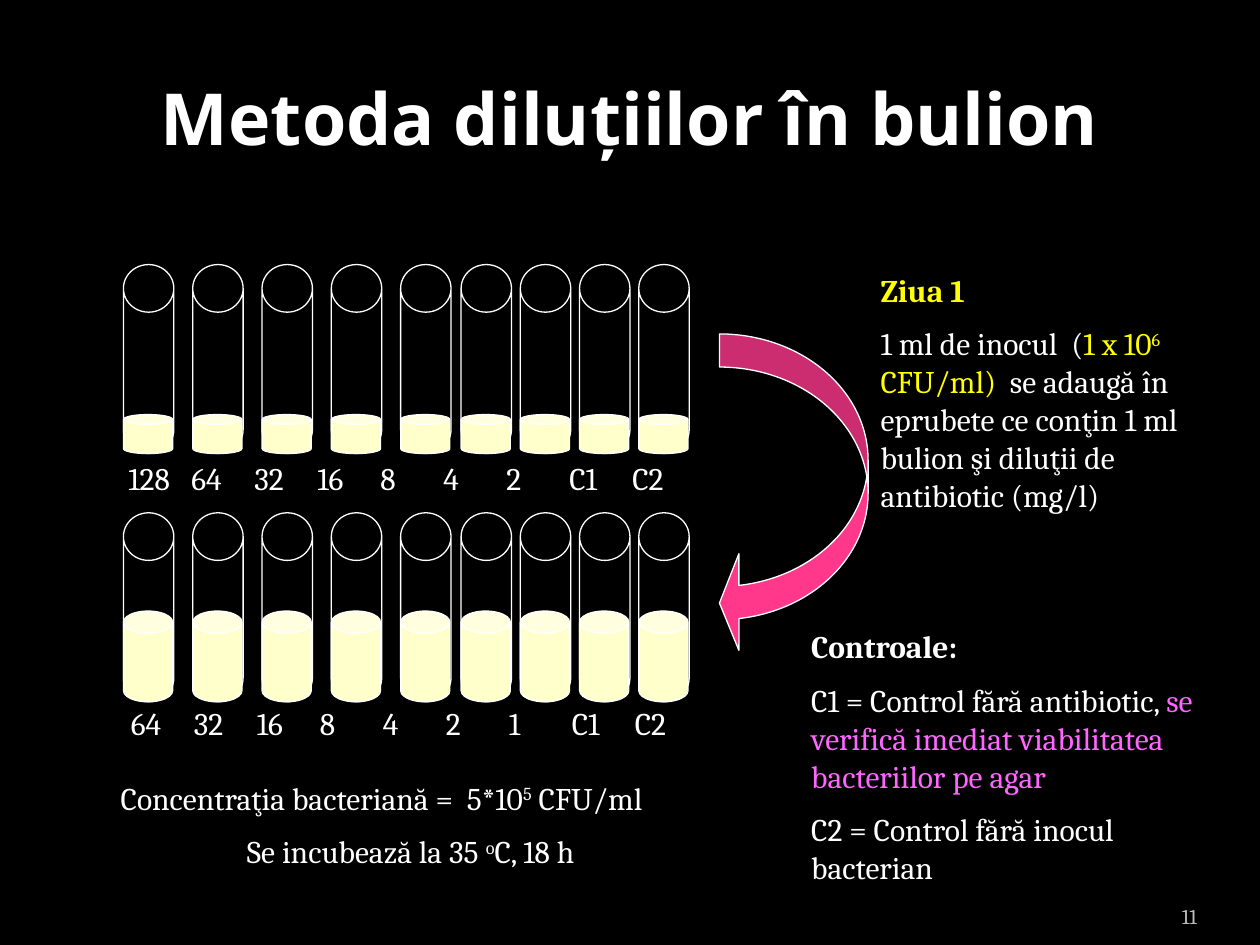
import pptx
import pptx.util
import pptx.dml.color
import pptx.enum.shapes
import pptx.enum.text
import pptx.oxml.ns
from lxml import etree

Inches, Pt = pptx.util.Inches, pptx.util.Pt
SHAPE = pptx.enum.shapes.MSO_SHAPE
ALIGN = pptx.enum.text.PP_ALIGN
ANCHOR = pptx.enum.text.MSO_ANCHOR

THEME = {
    "background": "000000", "text": "FFFFFF", "yellow": "FFFF00", "pink": "FF66FF",
    "broth": "FFFFCC", "arrow": "FF388C", "muted": "BDBDBD",
    "heading_font": "Noto Sans", "body_font": "Cambria",
    "title_size": 41, "body_size": 18, "number_size": 12,
    "line_width": 0.75, "paragraph_gap": 9,
}

# A paragraph is a list of runs: (text, colour, style)
TITLE = [[("Metoda diluțiilor în bulion", "text", "bold")]]
SLIDE_NUMBER = [[("11", "muted", "")]]
DAY_ONE = [
    [("Ziua 1", "yellow", "bold")],
    [("1 ml de inocul  (", "text", ""), ("1 x 10", "yellow", ""),
     ("6", "yellow", "super"), (" CFU/ml) ", "yellow", ""),
     (" se adaugă în eprubete ce conţin 1 ml bulion şi diluţii de antibiotic (mg/l)",
      "text", "")],
]
CONTROLS = [
    [("Controale:", "text", "bold")],
    [("C1 = Control fără antibiotic, ", "text", ""),
     ("se verifică imediat viabilitatea bacteriilor pe agar", "pink", "")],
    [("C2 = Control fără inocul bacterian", "text", "")],
]
INCUBATION = [
    [("Concentraţia bacteriană =  5*10", "text", ""), ("5", "text", "super"),
     (" CFU/ml", "text", "")],
    [("Se incubează la 35 ", "text", ""), ("o", "text", "super"),
     ("C, 18 h", "text", "")],
]
# Each label comes with its left edge on the slide
RACKS = [
    {"top": 2.1, "broth_height": 0.31, "broth_curve": 0.25, "label_box": (0.86, 3.59),
     "labels": [("128", 1.02), ("64", 1.51), ("32", 2.08), ("16", 2.59), ("8", 3.07),
                ("4", 3.58), ("2", 3.98), ("C1", 4.25), ("C2", 4.64)]},
    {"top": 4.07, "broth_height": 0.72, "broth_curve": 0.45, "label_box": (0.94, 5.54),
     "labels": [("64", 1.04), ("32", 1.55), ("16", 2.11), ("8", 2.65), ("4", 3.1),
                ("2", 3.5), ("1", 4.0), ("C1", 4.25), ("C2", 4.64)]},
]
TUBE_WIDTH, TUBE_HEIGHT, BROTH_WIDTH = 0.4, 1.5, 0.39
WIDE_STEP, NARROW_STEP = 0.55, 0.47
TUBE_LEFTS = ([0.98 + WIDE_STEP * i for i in range(5)]
              + [3.19 + NARROW_STEP * i for i in range(1, 5)])
TEXT_INSET = 0.1


def colour(name):
    return pptx.dml.color.RGBColor.from_string(THEME[name])


def write(frame, paragraphs, size="body_size", font="body_font"):
    for i, runs in enumerate(paragraphs):
        paragraph = frame.paragraphs[0] if i == 0 else frame.add_paragraph()
        if i:
            paragraph.space_before = Pt(THEME["paragraph_gap"])
        for text, shade, style in runs:
            run = paragraph.add_run()
            run.text = text
            run.font.name = THEME[font]
            run.font.size = Pt(THEME[size])
            run.font.bold = style == "bold"
            run.font.color.rgb = colour(shade)
            if style == "super":
                run.font._element.set("baseline", "30000")


def add_text(shapes, box, paragraphs, size="body_size"):
    frame = shapes.add_textbox(*map(Inches, box)).text_frame
    frame.word_wrap = True
    write(frame, paragraphs, size)
    return frame


def add_outlined(shapes, kind, box, adjustments, fill=None):
    shape = shapes.add_shape(kind, *map(Inches, box))
    shape.shadow.inherit = False
    for i, value in enumerate(adjustments):
        shape.adjustments[i] = value
    if fill:
        shape.fill.solid()
        shape.fill.fore_color.rgb = colour(fill)
    else:
        shape.fill.background()
    shape.line.color.rgb = colour("text")
    shape.line.width = Pt(THEME["line_width"])


def add_labels(shapes, left, top, labels):
    """Write one line whose labels sit at tab stops below the tubes."""
    line = "\t".join(text for text, _ in labels)
    frame = add_text(shapes, (left, top, 5.59, 0.4), [[(line, "text", "")]])
    offsets = [Inches(x - left - TEXT_INSET) for _, x in labels]
    properties = frame.paragraphs[0]._p.get_or_add_pPr()
    properties.set("marL", str(max(offsets[0], 0)))
    properties.set("indent", "0")
    stops = etree.SubElement(properties, pptx.oxml.ns.qn("a:tabLst"))
    for offset in offsets[1:]:
        etree.SubElement(stops, pptx.oxml.ns.qn("a:tab"), pos=str(offset), algn="l")


def add_rack(slide, rack):
    shapes = slide.shapes.add_group_shape().shapes
    broth_top = rack["top"] + TUBE_HEIGHT - rack["broth_height"]
    for left in TUBE_LEFTS:
        add_outlined(shapes, SHAPE.CAN,
                     (left, rack["top"], TUBE_WIDTH, TUBE_HEIGHT), [0.945])
        add_outlined(shapes, SHAPE.CAN,
                     (left, broth_top, BROTH_WIDTH, rack["broth_height"]),
                     [rack["broth_curve"]], "broth")
    add_labels(shapes, *rack["label_box"], rack["labels"])


def main():
    deck = pptx.Presentation()
    deck.slide_width, deck.slide_height = Inches(10), Inches(7.5)
    slide = deck.slides.add_slide(deck.slide_layouts[5])
    slide.background.fill.solid()
    slide.background.fill.fore_color.rgb = colour("background")

    title = slide.shapes.title
    title.left, title.top, title.width, title.height = map(Inches, (0.5, 0.3, 9, 1.25))
    title.text_frame.vertical_anchor = ANCHOR.MIDDLE
    write(title.text_frame, TITLE, "title_size", "heading_font")
    title.text_frame.paragraphs[0].alignment = ALIGN.CENTER

    number = add_text(slide.shapes, (8.67, 7.02, 0.83, 0.4), SLIDE_NUMBER, "number_size")
    number.margin_left = number.margin_right = 0
    number.vertical_anchor = ANCHOR.BOTTOM
    number.paragraphs[0].alignment = ALIGN.RIGHT

    add_outlined(slide.shapes, SHAPE.CURVED_LEFT_ARROW, (5.71, 2.65, 1.18, 2.52),
                 [0.223, 0.65, 0.131], "arrow")
    add_text(slide.shapes, (6.89, 2.1, 3.03, 2.07), DAY_ONE)
    add_text(slide.shapes, (6.34, 4.93, 3.43, 2.52), CONTROLS)
    incubation = add_text(slide.shapes, (0.86, 6.13, 4.8, 0.86), INCUBATION)
    incubation.paragraphs[1].alignment = ALIGN.CENTER

    for rack in RACKS:
        add_rack(slide, rack)
    deck.save("out.pptx")


if __name__ == "__main__":
    main()
